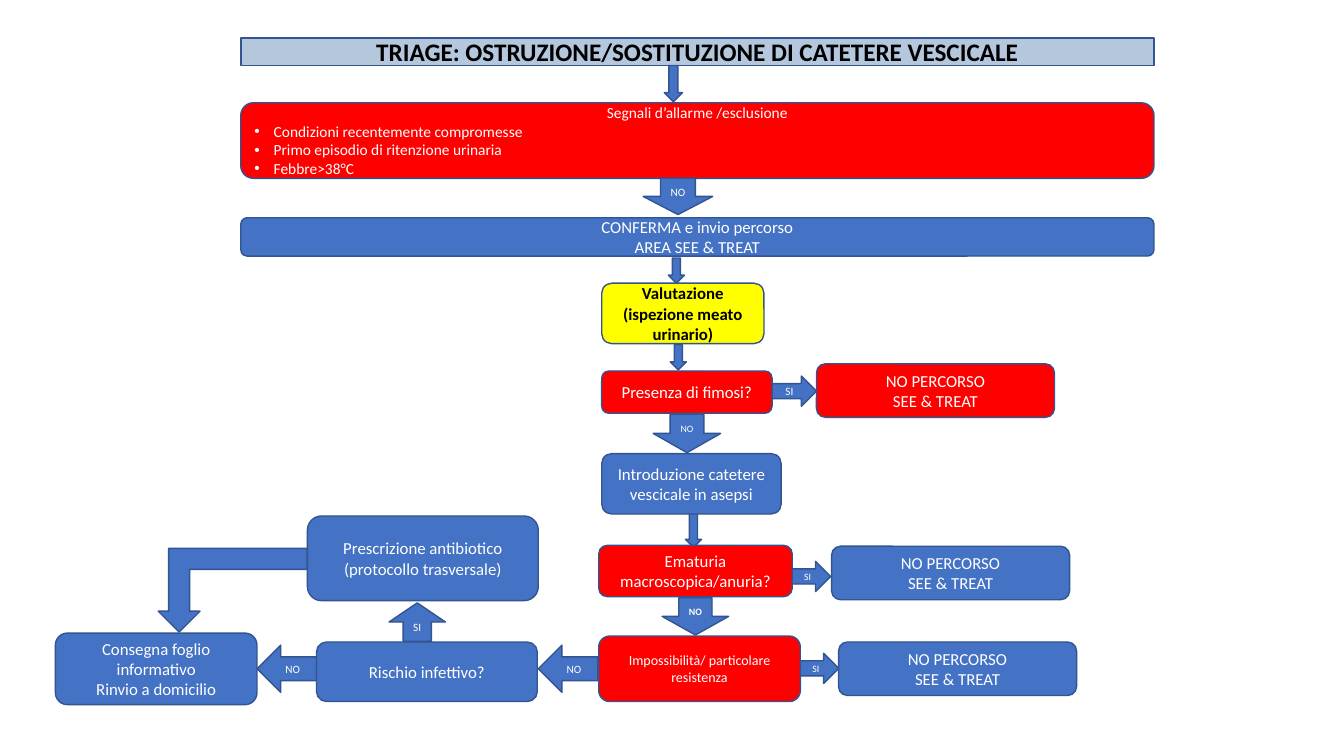
"""Build the catheter triage flowchart slide."""

from dataclasses import dataclass

import lxml.etree
import pptx
import pptx.dml.color
import pptx.enum.shapes
import pptx.enum.text
import pptx.oxml.ns
import pptx.shapes.autoshape
import pptx.slide
import pptx.text.text
import pptx.util

COLOURS = {
    "blue": "4472C4",
    "pale": "B4C7DC",
    "red": "FF0000",
    "yellow": "FFFF00",
    "outline": "325490",
    "white": "FFFFFF",
    "black": "000000",
}
FONT = "Calibri"
BAR_LEFT, BAR_WIDTH = 172, 652.3
STOP_TEXT = "NO PERCORSO\nSEE & TREAT"
STOP_WIDTH, STOP_HEIGHT = 170, 38.2
BULLET_INDENT = 13.7
Kind = pptx.enum.shapes.MSO_SHAPE
Align = pptx.enum.text.PP_ALIGN


@dataclass(frozen=True)
class Box:
    """A rounded step of the flowchart, measured in points."""

    text: str
    left: float
    top: float
    width: float
    height: float
    fill: str = "blue"
    colour: str = "white"
    size: float = 12
    bold: bool = False


@dataclass(frozen=True)
class Arrow:
    """A block arrow between two steps, measured in points."""

    kind: Kind
    left: float
    top: float
    width: float
    height: float
    text: str = ""
    size: float = 8
    bold: bool = False
    rotation: float = 0


TITLE = Box("TRIAGE: OSTRUZIONE/SOSTITUZIONE DI CATETERE VESCICALE",
            BAR_LEFT, 27.2, BAR_WIDTH, 19.6, "pale", "black", 18, True)
WARNINGS = Box("Segnali d’allarme /esclusione\nCondizioni recentemente compromesse\n"
               "Primo episodio di ritenzione urinaria\nFebbre>38°C",
               BAR_LEFT, 73.4, BAR_WIDTH, 54, "red", size=11)
BOXES = [
    Box("CONFERMA e invio percorso\nAREA SEE & TREAT", BAR_LEFT, 155.5, BAR_WIDTH, 27.4),
    Box("Valutazione\n(ispezione meato urinario)", 429.8, 202.3, 115.9, 43.2,
        "yellow", "black", bold=True),
    Box("Presenza di fimosi?", 429.8, 265, 121.7, 30.2, "red"),
    Box("Introduzione catetere vescicale in asepsi", 429.8, 324, 128.2, 43.2),
    Box("Ematuria macroscopica/anuria?", 427.7, 389.5, 138.2, 36.7, "red"),
    Box("Impossibilità/ particolare resistenza", 427.7, 454.3, 144, 46.8, "red", size=10),
    Box("Rischio infettivo?", 226.1, 458.6, 157.7, 42.5),
    Box("Prescrizione antibiotico\n(protocollo trasversale)", 219.6, 368.6, 164.9, 60.5),
    Box("Consegna foglio informativo\nRinvio a domicilio", 39.6, 452.2, 144, 51.1),
    Box(STOP_TEXT, 583.2, 259.9, STOP_WIDTH, STOP_HEIGHT, "red"),
    Box(STOP_TEXT, 594, 390.2, STOP_WIDTH, STOP_HEIGHT),
    Box(STOP_TEXT, 599, 458.6, STOP_WIDTH, STOP_HEIGHT),
]
ARROWS = [
    Arrow(Kind.DOWN_ARROW, 474.5, 46.8, 13, 25.9),
    Arrow(Kind.DOWN_ARROW, 459.4, 127.4, 49.7, 25.9, "NO"),
    Arrow(Kind.DOWN_ARROW, 477.4, 184.3, 11.5, 18),
    Arrow(Kind.DOWN_ARROW, 478.8, 246.2, 11.5, 18),
    Arrow(Kind.DOWN_ARROW, 466.6, 295.9, 48.2, 27.4, "NO", 7),
    Arrow(Kind.DOWN_ARROW, 489.6, 366.5, 11.5, 24.5),
    Arrow(Kind.DOWN_ARROW, 473, 427, 47.5, 26.6, "NO", 7, True),
    Arrow(Kind.RIGHT_ARROW, 550.1, 268.6, 33.1, 21.6, "SI"),
    Arrow(Kind.RIGHT_ARROW, 565.9, 401, 27.4, 21.6, "SI", 7),
    Arrow(Kind.RIGHT_ARROW, 571.7, 466.6, 27.4, 21.6, "SI", 7),
    Arrow(Kind.LEFT_ARROW, 384.5, 460.8, 42.5, 33.8, "NO"),
    Arrow(Kind.LEFT_ARROW, 183.6, 460.8, 42.5, 33.8, "NO"),
    Arrow(Kind.UP_ARROW, 277.9, 430.6, 40.3, 27.4, "SI"),
    Arrow(Kind.BENT_UP_ARROW, 113, 391.7, 106.6, 59.8, rotation=180),
]


def rgb(name: str) -> pptx.dml.color.RGBColor:
    """Return a named colour."""
    return pptx.dml.color.RGBColor.from_string(COLOURS[name])


def paint(shape: pptx.shapes.autoshape.Shape, fill: str) -> None:
    """Fill and outline a shape."""
    shape.fill.solid()
    shape.fill.fore_color.rgb = rgb(fill)
    shape.line.color.rgb = rgb("outline")
    shape.line.width = pptx.util.Pt(1)


def write(shape: pptx.shapes.autoshape.Shape, text: str, size: float, colour: str,
          bold: bool, side: float, edge: float, bulleted: bool = False) -> None:
    """Write centred lines, bulleting all but the first when asked."""
    frame = shape.text_frame
    frame.text = text
    frame.word_wrap = True
    frame.auto_size = pptx.enum.text.MSO_AUTO_SIZE.NONE
    frame.vertical_anchor = pptx.enum.text.MSO_ANCHOR.MIDDLE
    frame.margin_left = frame.margin_right = pptx.util.Pt(side)
    frame.margin_top = frame.margin_bottom = pptx.util.Pt(edge)
    for index, para in enumerate(frame.paragraphs):
        para.alignment = Align.CENTER
        para.space_before = pptx.util.Pt(0)
        if bulleted:
            set_bullet(para, index > 0)
        para.font.name = FONT
        para.font.size = pptx.util.Pt(size)
        para.font.bold = bold
        para.font.color.rgb = rgb(colour)


def set_bullet(para: pptx.text.text._Paragraph, shown: bool) -> None:
    """Give a paragraph a hanging bullet, or remove the inherited one."""
    properties = para._p.get_or_add_pPr()
    indent = pptx.util.Pt(BULLET_INDENT) if shown else 0
    properties.set("marL", str(indent))
    properties.set("indent", str(-indent))
    name = pptx.oxml.ns.qn
    if shown:
        para.alignment = Align.JUSTIFY
        lxml.etree.SubElement(properties, name("a:buFont"), typeface="Arial")
        lxml.etree.SubElement(properties, name("a:buChar"), char="•")
    else:
        lxml.etree.SubElement(properties, name("a:buNone"))


def place(shape: pptx.shapes.autoshape.Shape, box: Box) -> None:
    """Move a placeholder to a box and round its corners."""
    shape.left, shape.top, shape.width, shape.height = (
        pptx.util.Pt(value) for value in (box.left, box.top, box.width, box.height))
    name = pptx.oxml.ns.qn
    outline = lxml.etree.SubElement(shape._element.spPr, name("a:prstGeom"), prst="roundRect")
    lxml.etree.SubElement(outline, name("a:avLst"))
    paint(shape, box.fill)
    write(shape, box.text, box.size, box.colour, box.bold, 7.2, 3.6, box is WARNINGS)


def add_block(page: pptx.slide.Slide, kind: Kind, item: Box | Arrow,
              fill: str) -> pptx.shapes.autoshape.Shape:
    """Add a painted preset shape without shadow."""
    shape = page.shapes.add_shape(kind, *(
        pptx.util.Pt(value) for value in (item.left, item.top, item.width, item.height)))
    shape.shadow.inherit = False
    paint(shape, fill)
    return shape


def main() -> None:
    """Build and save the deck."""
    deck = pptx.Presentation()
    deck.slide_width, deck.slide_height = pptx.util.Pt(960), pptx.util.Pt(540)
    page = deck.slides.add_slide(deck.slide_layouts[1])
    place(page.shapes.title, TITLE)
    place(page.placeholders[1], WARNINGS)
    for arrow in ARROWS:
        shape = add_block(page, arrow.kind, arrow, "blue")
        shape.rotation = arrow.rotation
        if arrow.text:
            write(shape, arrow.text, arrow.size, "white", arrow.bold, 0, 0)
    for box in BOXES:
        shape = add_block(page, Kind.ROUNDED_RECTANGLE, box, box.fill)
        write(shape, box.text, box.size, box.colour, box.bold, 7.2, 3.6)
    deck.save("out.pptx")


if __name__ == "__main__":
    main()
